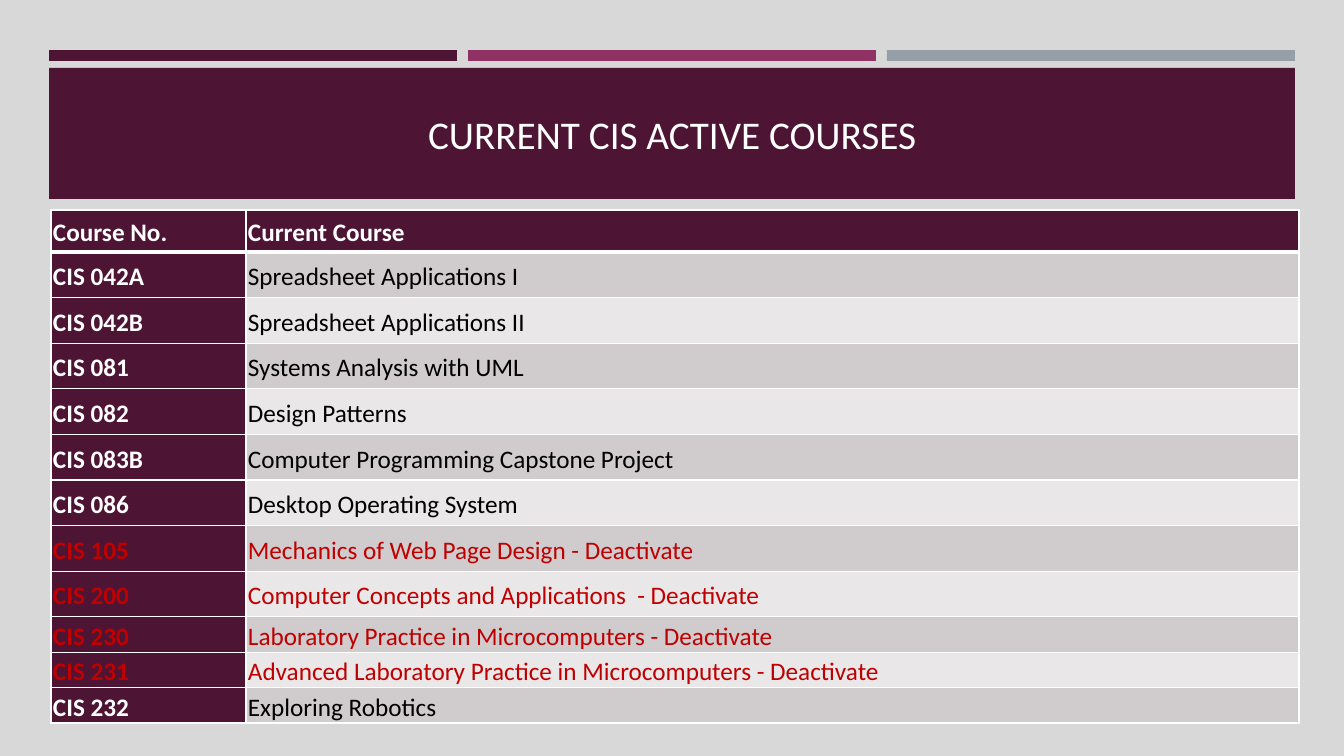
from lxml.etree import SubElement
from pptx import Presentation
from pptx.dml.color import RGBColor
from pptx.enum.shapes import MSO_SHAPE
from pptx.enum.text import MSO_ANCHOR, PP_ALIGN
from pptx.oxml.ns import qn
from pptx.util import Emu, Pt

PLUM = RGBColor(0x4D, 0x14, 0x34)
MAGENTA = RGBColor(0x90, 0x31, 0x63)
SLATE = RGBColor(0x96, 0x9F, 0xA7)
BACKGROUND = RGBColor(0xD8, 0xD8, 0xD8)
DARK_ROW = RGBColor(0xD0, 0xCC, 0xCE)
LIGHT_ROW = RGBColor(0xE9, 0xE7, 0xE8)
WHITE = RGBColor(0xFF, 0xFF, 0xFF)
BLACK = RGBColor(0x00, 0x00, 0x00)
RED = RGBColor(0xC0, 0x00, 0x00)

FONT = "Calibri"
HEADINGS = ("Course No.", "Current Course")
COURSES = [
    ("CIS 042A", "Spreadsheet Applications I"),
    ("CIS 042B", "Spreadsheet Applications II"),
    ("CIS 081", "Systems Analysis with UML"),
    ("CIS 082", "Design Patterns"),
    ("CIS 083B", "Computer Programming Capstone Project"),
    ("CIS 086", "Desktop Operating System"),
    ("CIS 105", "Mechanics of Web Page Design - Deactivate"),
    ("CIS 200", "Computer Concepts and Applications  - Deactivate"),
    ("CIS 230", "Laboratory Practice in Microcomputers - Deactivate"),
    ("CIS 231", "Advanced Laboratory Practice in Microcomputers - Deactivate"),
    ("CIS 232", "Exploring Robotics"),
]
COMPACT_COUNT = 3


def px(length):
    return Emu(round(length * 914400 / 100.8))


def style_paragraph(paragraph, size, color, bold=False):
    paragraph.font.name = FONT
    paragraph.font.size = Pt(size)
    paragraph.font.bold = bold
    paragraph.font.color.rgb = color


def add_rectangle(slide, left, top, width, height, color):
    shape = slide.shapes.add_shape(
        MSO_SHAPE.RECTANGLE, px(left), px(top), px(width), px(height))
    shape.shadow.inherit = False
    shape.fill.solid()
    shape.fill.fore_color.rgb = color
    shape.line.fill.background()
    return shape


def add_accent_bars(slide, left, top, width, height):
    colors = (PLUM, MAGENTA, SLATE)
    gap = 11
    bar_width = (width - gap * (len(colors) - 1)) // len(colors)
    for index, color in enumerate(colors):
        add_rectangle(slide, left + index * (bar_width + gap), top,
                      bar_width, height, color)


def add_title_band(slide, left, top, width, height):
    band = add_rectangle(slide, left, top, width, height, PLUM)
    text_frame = band.text_frame
    text_frame.word_wrap = True
    text_frame.vertical_anchor = MSO_ANCHOR.MIDDLE
    paragraph = text_frame.paragraphs[0]
    paragraph.text = "CURRENT CIS ACTIVE COURSES"
    paragraph.alignment = PP_ALIGN.CENTER
    style_paragraph(paragraph, 28, WHITE)


def set_borders(cell, top_width, bottom_width):
    properties = cell._tc.get_or_add_tcPr()
    widths = {"a:lnL": 1, "a:lnR": 1, "a:lnT": top_width, "a:lnB": bottom_width}
    for position, (tag, width) in enumerate(widths.items()):
        line = SubElement(properties, qn(tag), w=str(Pt(width)))
        fill = SubElement(line, qn("a:solidFill"))
        SubElement(fill, qn("a:srgbClr"), val=str(WHITE))
        properties.insert(position, line)


def fill_cell(cell, text, fill, color, bold):
    cell.fill.solid()
    cell.fill.fore_color.rgb = fill
    cell.vertical_anchor = MSO_ANCHOR.MIDDLE
    cell.margin_left = cell.margin_right = px(2)
    cell.margin_top = cell.margin_bottom = 0
    paragraph = cell.text_frame.paragraphs[0]
    paragraph.text = text
    paragraph.line_spacing = 1.15
    style_paragraph(paragraph, 18, color, bold)


def add_course_table(slide, left, top, width, height):
    code_width, header_height, compact_height = 195, 42, 35
    regular_count = len(COURSES) - COMPACT_COUNT
    regular_height = (height - header_height
                      - COMPACT_COUNT * compact_height) / regular_count
    table = slide.shapes.add_table(
        len(COURSES) + 1, 2, px(left), px(top), px(width), px(height)).table
    table.columns[0].width = px(code_width)
    table.columns[1].width = px(width - code_width)
    row_heights = ([header_height] + [regular_height] * regular_count
                   + [compact_height] * COMPACT_COUNT)
    for row, row_height in zip(table.rows, row_heights):
        row.height = px(row_height)

    for cell, heading in zip(table.rows[0].cells, HEADINGS):
        fill_cell(cell, heading, PLUM, WHITE, True)
        set_borders(cell, 1, 3)
    for index, (code, name) in enumerate(COURSES, 1):
        deactivated = name.endswith("Deactivate")
        code_cell, name_cell = table.rows[index].cells
        fill_cell(code_cell, code, PLUM, RED if deactivated else WHITE, True)
        fill_cell(name_cell, name, DARK_ROW if index % 2 else LIGHT_ROW,
                  RED if deactivated else BLACK, False)
        for cell in (code_cell, name_cell):
            set_borders(cell, 3 if index == 1 else 1, 1)


def main():
    presentation = Presentation()
    presentation.slide_width = px(1344)
    presentation.slide_height = px(756)
    slide = presentation.slides.add_slide(presentation.slide_layouts[6])
    slide.background.fill.solid()
    slide.background.fill.fore_color.rgb = BACKGROUND
    add_accent_bars(slide, 49, 50, 1246, 11)
    add_title_band(slide, 49, 68, 1246, 131)
    add_course_table(slide, 51, 210, 1248, 512)
    presentation.save("out.pptx")


if __name__ == "__main__":
    main()
